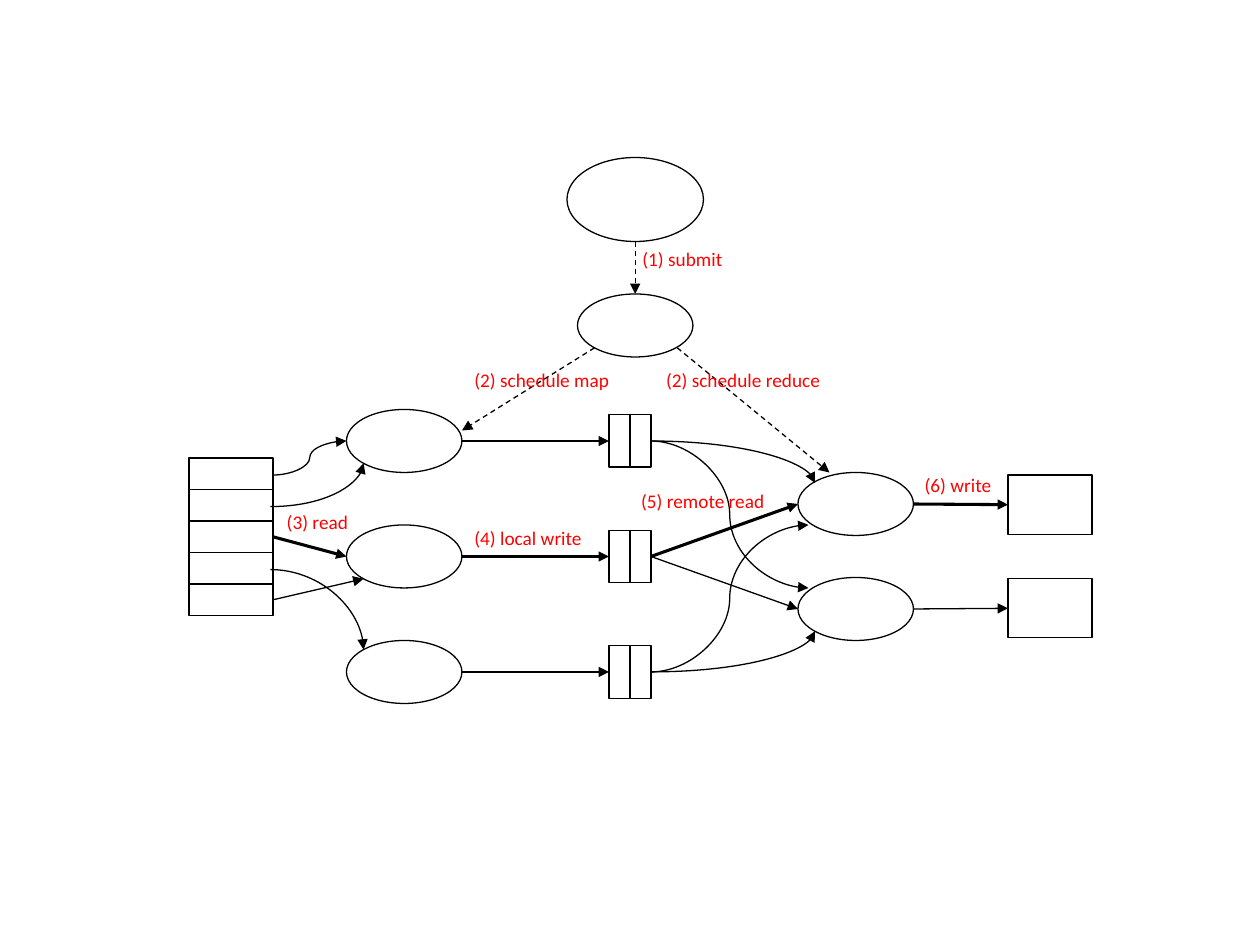
from lxml import etree
from pptx import Presentation
from pptx.dml.color import RGBColor
from pptx.enum import dml, shapes, text
from pptx.oxml import ns
from pptx.util import Pt

PX = 9525
COLORS = {"ink": "000000", "label": "FF0000"}
KINDS = shapes.MSO_SHAPE
THIN, THICK = 0.75, 1.75

deck = Presentation()
deck.slide_width, deck.slide_height = 960 * PX, 720 * PX
page = deck.slides.add_slide(deck.slide_layouts[6])


def add_node(kind, *bounds):
    node = page.shapes.add_shape(kind, *[value * PX for value in bounds])
    node.shadow.inherit = False
    node.fill.background()
    node.line.width = Pt(THIN)
    node.line.color.rgb = RGBColor.from_string(COLORS["ink"])
    return node


def add_arrow(start, end, width=THIN, dashed=False, preset="line"):
    kind = shapes.MSO_CONNECTOR.STRAIGHT if preset == "line" else shapes.MSO_CONNECTOR.CURVE
    arrow = page.shapes.add_connector(kind, *[value * PX for value in (*start, *end)])
    arrow.line.width = Pt(width)
    arrow.line.color.rgb = RGBColor.from_string(COLORS["ink"])
    if dashed:
        arrow.line.dash_style = dml.MSO_LINE.DASH
    properties = arrow._element.spPr
    properties.find(ns.qn("a:prstGeom")).set("prst", preset)
    etree.SubElement(properties.find(ns.qn("a:ln")), ns.qn("a:tailEnd"), type="triangle")
    etree.SubElement(properties, ns.qn("a:effectLst"))
    return arrow


inputs = [add_node(KINDS.RECTANGLE, 144, 349 + 24 * row, 64, 24) for row in range(5)]

for left, top in [(264, 312), (264, 400), (264, 488), (608, 360), (608, 440), (440, 224)]:
    add_node(KINDS.OVAL, left, top, 88, 48)
add_node(KINDS.OVAL, 432, 120, 104, 64)

outputs = [add_node(KINDS.RECTANGLE, 768, top, 64, 45) for top in (362, 441)]
splits = [
    [add_node(KINDS.RECTANGLE, left, 316 + 88 * row, 16, 40) for left in (464, 480)]
    for row in range(3)
]

for preset, start, end in [
    ("curvedConnector3", (208, 362), (264, 336)),
    ("curvedConnector2", (206, 386), (277, 353)),
    ("curvedConnector2", (206, 434), (277, 495)),
    ("curvedConnector2", (496, 336), (621, 368)),
    ("curvedConnector3", (496, 336), (616, 448)),
    ("curvedConnector3", (496, 512), (616, 400)),
    ("curvedConnector2", (496, 512), (621, 481)),
]:
    add_arrow(start, end, preset=preset)

for block, start, end, width in [
    (inputs[2], (208, 409), (264, 424), THICK),
    (inputs[4], (208, 457), (277, 441), THIN),
    (splits[1][1], (496, 424), (608, 384), THICK),
    (splits[1][1], (496, 424), (608, 464), THIN),
]:
    add_arrow(start, end, width).begin_connect(block, 3)

for block, start, end, width in [
    (splits[0][0], (352, 336), (464, 336), THIN),
    (splits[1][0], (352, 424), (464, 424), THICK),
    (splits[2][0], (352, 512), (464, 512), THIN),
    (outputs[0], (696, 384), (768, 384), THICK),
    (outputs[1], (696, 464), (768, 464), THIN),
]:
    add_arrow(start, end, width).end_connect(block, 1)

for start, end in [
    ((484, 184), (484, 224)),
    ((453, 265), (352, 328)),
    ((516, 265), (632, 360)),
]:
    add_arrow(start, end, dashed=True)

FRAME_FORMAT = {"word_wrap": False, "auto_size": text.MSO_AUTO_SIZE.SHAPE_TO_FIT_TEXT}
FONT_FORMAT = {"name": "Calibri", "size": Pt(11)}
for words, left, top, width in [
    ("(1) submit", 480, 184, 85),
    ("(2) schedule map", 352, 276, 133),
    ("(2) schedule reduce", 498, 276, 150),
    ("(3) read", 209, 384, 71),
    ("(4) local write", 352, 396, 108),
    ("(5) remote read", 479, 368, 121),
    ("(6) write", 695, 356, 73),
]:
    box = page.shapes.add_textbox(left * PX, top * PX, width * PX, 28 * PX)
    for name, value in FRAME_FORMAT.items():
        setattr(box.text_frame, name, value)
    span = box.text_frame.paragraphs[0].add_run()
    span.text = words
    for name, value in FONT_FORMAT.items():
        setattr(span.font, name, value)
    span.font.color.rgb = RGBColor.from_string(COLORS["label"])

deck.save("out.pptx")
